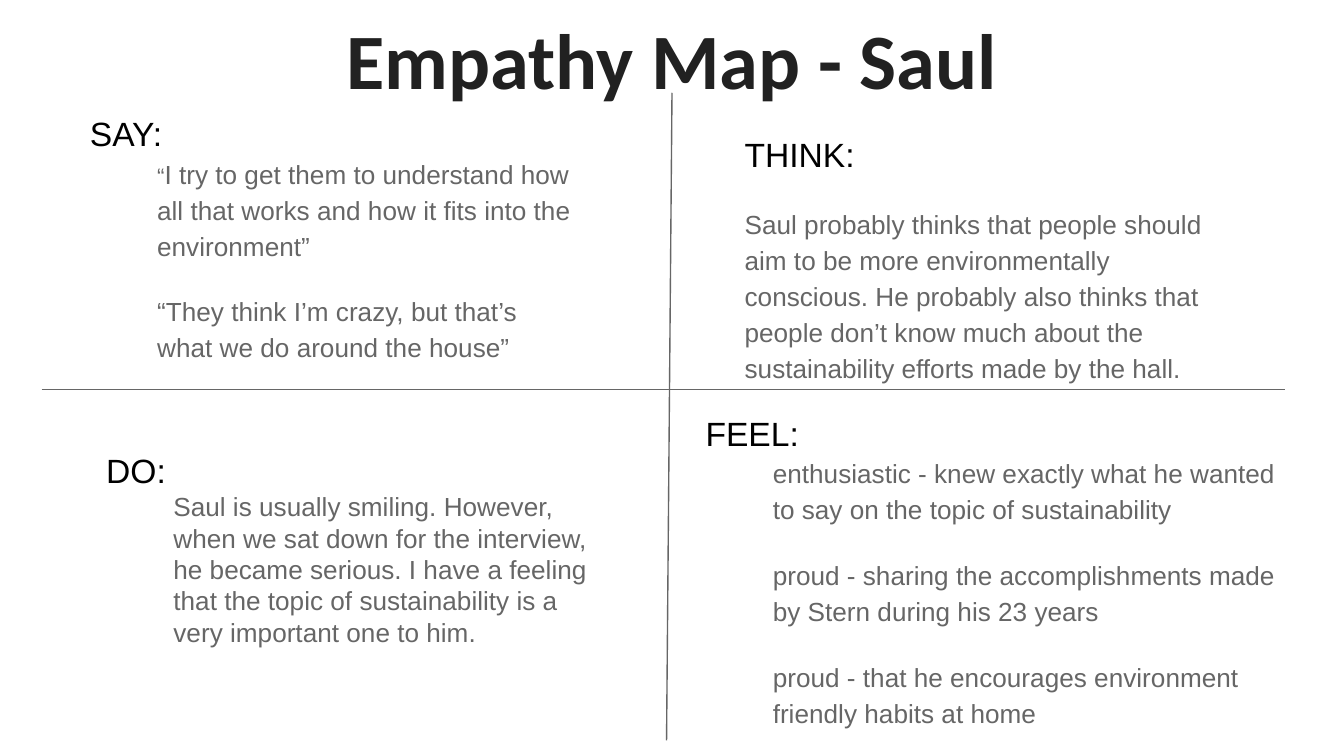
from dataclasses import dataclass

import pptx
import pptx.dml.color
import pptx.enum.shapes
import pptx.enum.text
import pptx.oxml
import pptx.oxml.ns
import pptx.util

Pt = pptx.util.Pt
RGB = pptx.dml.color.RGBColor


@dataclass(frozen=True)
class Theme:
    title_font: str = "Calibri"
    body_font: str = "Arial"
    title_color: RGB = RGB(0x21, 0x21, 0x21)
    heading_color: RGB = RGB(0, 0, 0)
    body_color: RGB = RGB(0x66, 0x66, 0x66)
    title_size: float = 42
    heading_size: float = 18
    body_size: float = 14
    quote_size: float = 12
    inset: float = 7.2
    indent: float = 36
    line_spacing: float = 1.15
    space_after: float = 16
    rule_width: float = 0.75


THEME = Theme()

QUADRANTS = [
    {
        "box": (41, 53.3, 273.6, 136),
        "heading": "SAY:",
        "entries": [
            [
                ("“", THEME.quote_size),
                ("I try to get them to understand how all that works and how it "
                 "fits into the environment”", THEME.body_size),
            ],
            [("“They think I’m crazy, but that’s what we do around the house”",
              THEME.body_size)],
        ],
    },
    {
        "box": (49.7, 234, 273.6, 136),
        "heading": "DO:",
        "entries": [
            [("Saul is usually smiling. However, when we sat down for the "
              "interview, he became serious. I have a feeling that the topic of "
              "sustainability is a very important one to him.", THEME.body_size)],
        ],
        "spaced_entries": False,
    },
    {
        "box": (391.7, 61.2, 273.6, 136),
        "heading": "THINK:",
        "entries": [
            [("Saul probably thinks that people should aim to be more "
              "environmentally conscious. He probably also thinks that people "
              "don’t know much about the sustainability efforts made by the hall.",
              THEME.body_size)],
        ],
        "spaced_heading": True,
        "indent": 0,
    },
    {
        "box": (370.8, 213.8, 324.7, 180),
        "heading": "FEEL:",
        "entries": [
            [("enthusiastic - knew exactly what he wanted to say on the topic of "
              "sustainability", THEME.body_size)],
            [("proud - sharing the accomplishments made by Stern during his 23 "
              "years", THEME.body_size)],
            [("proud - that he encourages environment friendly habits at home",
              THEME.body_size)],
        ],
    },
]


def place(shape, box):
    shape.left, shape.top, shape.width, shape.height = map(Pt, box)
    frame = shape.text_frame
    frame.word_wrap = True
    frame.auto_size = pptx.enum.text.MSO_AUTO_SIZE.NONE
    frame.vertical_anchor = pptx.enum.text.MSO_ANCHOR.TOP
    frame.margin_left = frame.margin_right = Pt(THEME.inset)
    frame.margin_top = frame.margin_bottom = Pt(THEME.inset)
    return frame


def add_run(paragraph, text, font, size, color, bold=False):
    run = paragraph.add_run()
    run.text = text
    run.font.name = font
    run.font.size = Pt(size)
    run.font.color.rgb = color
    run.font.bold = bold


def format_paragraph(paragraph, indent=0, spaced=False):
    paragraph.alignment = pptx.enum.text.PP_ALIGN.LEFT
    paragraph.line_spacing = THEME.line_spacing if spaced else 1.0
    paragraph.space_before = Pt(0)
    paragraph.space_after = Pt(THEME.space_after if spaced else 0)
    properties = paragraph._p.get_or_add_pPr()
    properties.set("marL", str(int(Pt(indent))))
    properties.set("indent", "0")
    properties.append(pptx.oxml.parse_xml(
        f"<a:buNone {pptx.oxml.ns.nsdecls('a')}/>"))


def build_title(shape, box, text):
    paragraph = place(shape, box).paragraphs[0]
    paragraph.alignment = pptx.enum.text.PP_ALIGN.CENTER
    add_run(paragraph, text, THEME.title_font, THEME.title_size,
            THEME.title_color, bold=True)


def build_quadrant(shape, box, heading, entries, spaced_heading=False,
                   spaced_entries=True, indent=THEME.indent):
    frame = place(shape, box)
    paragraph = frame.paragraphs[0]
    format_paragraph(paragraph, spaced=spaced_heading)
    add_run(paragraph, heading, THEME.body_font, THEME.heading_size,
            THEME.heading_color)
    for entry in entries:
        paragraph = frame.add_paragraph()
        format_paragraph(paragraph, indent, spaced_entries)
        for text, size in entry:
            add_run(paragraph, text, THEME.body_font, size, THEME.body_color)


def add_rule(slide, start, end):
    connector = slide.shapes.add_connector(
        pptx.enum.shapes.MSO_CONNECTOR.STRAIGHT, *map(Pt, start + end))
    connector.line.color.rgb = THEME.body_color
    connector.line.width = Pt(THEME.rule_width)
    connector._element.spPr.append(pptx.oxml.parse_xml(
        f"<a:effectLst {pptx.oxml.ns.nsdecls('a')}/>"))


def build_axes(slide, box):
    left, top, width, height = box
    middle = top + 159
    add_rule(slide, (left + 337.7, top), (left + 334.8, top + height))
    add_rule(slide, (left, middle), (left + width, middle))


def main():
    presentation = pptx.Presentation()
    presentation.slide_width = Pt(720)
    presentation.slide_height = Pt(405)
    comparison_layout = presentation.slide_layouts.get_by_name("Comparison")
    slide = presentation.slides.add_slide(comparison_layout)
    title, *bodies = slide.placeholders
    build_title(title, (24.5, -1.4, 671, 45.4), "Empathy Map - Saul")
    build_axes(slide, (22.3, 49.7, 666, 347))
    for body, quadrant in zip(bodies, QUADRANTS):
        build_quadrant(body, **quadrant)
    presentation.save("out.pptx")


if __name__ == "__main__":
    main()
